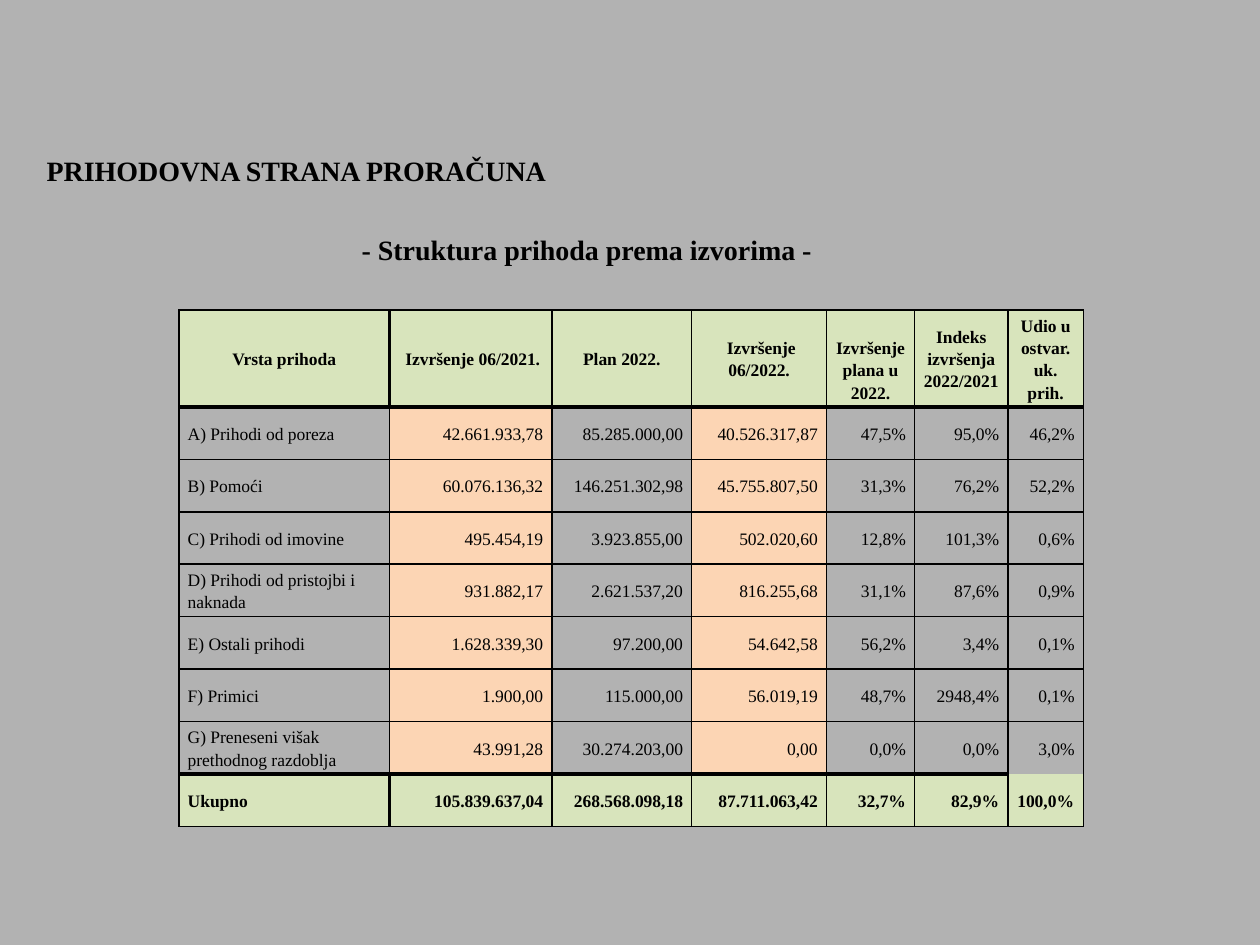
from typing import NamedTuple

from lxml.etree import SubElement
from pptx import Presentation
from pptx.dml.color import RGBColor
from pptx.enum.text import MSO_ANCHOR, MSO_AUTO_SIZE, PP_ALIGN
from pptx.oxml.ns import qn
from pptx.util import Inches, Pt

FONT = "Times New Roman"
BLACK, GREY, GREEN, PEACH = "000000", "B2B2B2", "D8E4BC", "FCD5B4"
THIN, THICK = 1, 2.25


class Column(NamedTuple):
    heading: str
    width: float
    fill: str | None = None
    align: PP_ALIGN = PP_ALIGN.RIGHT
    total_align: PP_ALIGN = PP_ALIGN.RIGHT


class Borders(NamedTuple):
    """Line widths in points; 0 means no line."""
    left: float = THIN
    right: float = THIN
    top: float = THIN
    bottom: float = THIN


COLUMNS = [
    Column("Vrsta prihoda", 1.67, None, PP_ALIGN.LEFT, PP_ALIGN.LEFT),
    Column(" Izvršenje 06/2021.", 1.29, PEACH),
    Column("Plan 2022.", 1.11),
    Column(" Izvršenje 06/2022.", 1.07, PEACH),
    Column(" Izvršenje plana u 2022.", 0.7),
    Column("Indeks izvršenja 2022/2021", 0.74),
    Column("Udio u ostvar. uk. prih.", 0.6, total_align=PP_ALIGN.CENTER),
]

REVENUES = [
    ("A) Prihodi od poreza", "42.661.933,78", "85.285.000,00",
     "40.526.317,87", "47,5%", "95,0%", "46,2%"),
    ("B) Pomoći", "60.076.136,32", "146.251.302,98",
     "45.755.807,50", "31,3%", "76,2%", "52,2%"),
    ("C) Prihodi od imovine", "495.454,19", "3.923.855,00",
     "502.020,60", "12,8%", "101,3%", "0,6%"),
    ("D) Prihodi od pristojbi i naknada", "931.882,17", "2.621.537,20",
     "816.255,68", "31,1%", "87,6%", "0,9%"),
    ("E) Ostali prihodi", "1.628.339,30", "97.200,00",
     "54.642,58", "56,2%", "3,4%", "0,1%"),
    ("F) Primici", "1.900,00", "115.000,00",
     "56.019,19", "48,7%", "2948,4%", "0,1%"),
    ("G) Preneseni višak prethodnog razdoblja", "43.991,28", "30.274.203,00",
     "0,00", "0,0%", "0,0%", "3,0%"),
]
TOTAL = ("Ukupno", "105.839.637,04", "268.568.098,18",
         "87.711.063,42", "32,7%", "82,9%", "100,0%")

TABLE_HEIGHT, HEADER_HEIGHT = 4.1, 0.77


def rgb(value: str) -> RGBColor:
    return RGBColor.from_string(value)


def format_font(paragraph, size: float, bold: bool) -> None:
    for run in paragraph.runs:
        run.font.name = FONT
        run.font.size = Pt(size)
        run.font.bold = bold
        run.font.color.rgb = rgb(BLACK)


def set_borders(cell, borders: Borders) -> None:
    properties = cell._tc.get_or_add_tcPr()
    for side, width in zip("LRTB", borders):
        line = SubElement(properties, qn(f"a:ln{side}"), w=str(Pt(width)))
        if width:
            fill = SubElement(line, qn("a:solidFill"))
            SubElement(fill, qn("a:srgbClr"), val=BLACK)
        else:
            SubElement(line, qn("a:noFill"))


def borders_at(row: int, column: int, last_row: int, last_column: int) -> Borders:
    """Thick rules set off the header and total; the last total has none above."""
    emphasized = row in (0, last_row)
    above_total = 0 if column == last_column else THICK
    rules = {0: THICK, last_row - 1: above_total}
    return Borders(
        left=THICK if emphasized and column == 1 else THIN,
        right=THICK if emphasized and column == 0 else THIN,
        top=rules.get(row - 1, THIN),
        bottom=rules.get(row, THIN),
    )


def fill_cell(cell, text: str, align: PP_ALIGN, bold: bool,
              fill: str | None, borders: Borders) -> None:
    cell.text_frame.text = text
    cell.vertical_anchor = MSO_ANCHOR.MIDDLE
    cell.margin_left = cell.margin_right = Inches(0.07)
    cell.margin_top = cell.margin_bottom = 0
    paragraph = cell.text_frame.paragraphs[0]
    paragraph.alignment = align
    paragraph.line_spacing = 1.15
    format_font(paragraph, 10, bold)
    set_borders(cell, borders)
    if fill:
        cell.fill.solid()
        cell.fill.fore_color.rgb = rgb(fill)
    else:
        cell.fill.background()


def add_headings(slide) -> None:
    title = slide.shapes.title
    title.left, title.top = Inches(0.27), Inches(1.17)
    title.width, title.height = Inches(9.51), Inches(5.54)
    frame = title.text_frame
    frame.text = "PRIHODOVNA STRANA PRORAČUNA"
    frame.word_wrap = True
    frame.auto_size = MSO_AUTO_SIZE.NONE
    frame.vertical_anchor = MSO_ANCHOR.TOP
    subtitle = frame.add_paragraph()
    subtitle.text = "- Struktura prihoda prema izvorima -"
    subtitle.space_before = Pt(26)
    subtitle._p.get_or_add_pPr().set("marL", str(Inches(2.5)))
    for paragraph in frame.paragraphs:
        paragraph.alignment = PP_ALIGN.LEFT
        format_font(paragraph, 16, True)


def add_revenue_table(slide) -> None:
    rows = [tuple(column.heading for column in COLUMNS), *REVENUES, TOTAL]
    last_row, last_column = len(rows) - 1, len(COLUMNS) - 1
    table = slide.shapes.add_table(
        len(rows), len(COLUMNS), Inches(1.42), Inches(2.46),
        Inches(sum(column.width for column in COLUMNS)), Inches(TABLE_HEIGHT),
    ).table
    table.first_row = table.horz_banding = False
    for grid_column, column in zip(table.columns, COLUMNS):
        grid_column.width = Inches(column.width)
    body_height = (TABLE_HEIGHT - HEADER_HEIGHT) / last_row
    for r, values in enumerate(rows):
        table.rows[r].height = Inches(body_height if r else HEADER_HEIGHT)
        emphasized = r in (0, last_row)
        for c, (column, value) in enumerate(zip(COLUMNS, values)):
            align = {0: PP_ALIGN.CENTER, last_row: column.total_align}.get(r, column.align)
            fill_cell(table.cell(r, c), value, align, emphasized,
                      GREEN if emphasized else column.fill,
                      borders_at(r, c, last_row, last_column))


def main() -> None:
    presentation = Presentation()
    presentation.slide_width, presentation.slide_height = Inches(10), Inches(7.5)
    slide = presentation.slides.add_slide(presentation.slide_layouts[5])
    slide.background.fill.solid()
    slide.background.fill.fore_color.rgb = rgb(GREY)
    add_headings(slide)
    add_revenue_table(slide)
    presentation.save("out.pptx")


if __name__ == "__main__":
    main()
